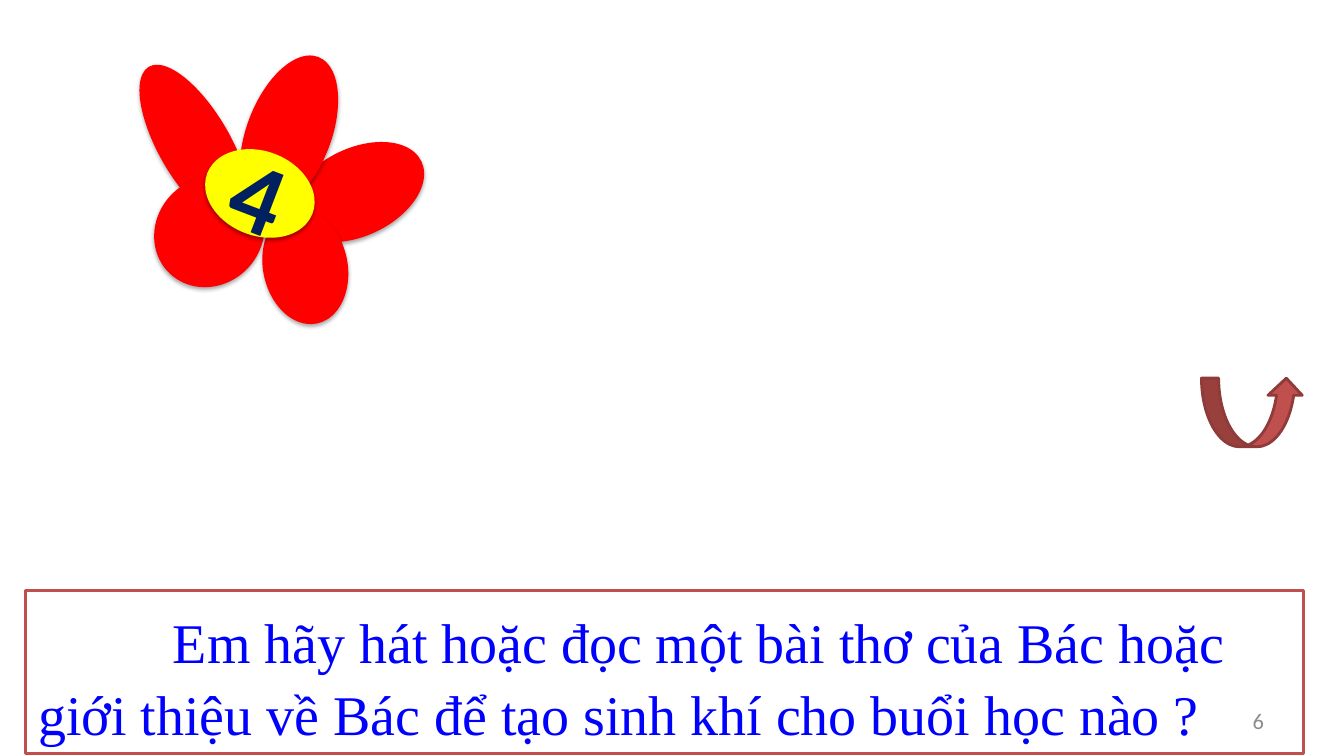
from lxml import etree
from pptx import Presentation
from pptx.dml.color import RGBColor
from pptx.enum.shapes import MSO_SHAPE
from pptx.enum.text import MSO_ANCHOR, PP_ALIGN
from pptx.oxml import parse_xml
from pptx.oxml.ns import nsdecls
from pptx.util import Cm, Pt

OVAL = MSO_SHAPE.OVAL
RECTANGLE = MSO_SHAPE.RECTANGLE
CURVED_ARROW = MSO_SHAPE.CURVED_UP_ARROW
MIDDLE, BOTTOM = MSO_ANCHOR.MIDDLE, MSO_ANCHOR.BOTTOM
LEFT, CENTER, RIGHT = PP_ALIGN.LEFT, PP_ALIGN.CENTER, PP_ALIGN.RIGHT

RED = RGBColor(0xFF, 0x00, 0x00)
YELLOW = RGBColor(0xFF, 0xFF, 0x00)
NAVY = RGBColor(0x00, 0x20, 0x60)
BLUE = RGBColor(0x00, 0x00, 0xFF)
WHITE = RGBColor(0xFF, 0xFF, 0xFF)
BRICK = RGBColor(0xC0, 0x50, 0x4D)
DARK_BRICK = RGBColor(0x8E, 0x3B, 0x39)
GRAY = RGBColor(0x8C, 0x8C, 0x8C)

# left, top, width, height in cm, then rotation in degrees
PETALS = [
    (7.9, 3.05, 2.21, 3.58, 64.4),
    (6.22, 1.3, 2.13, 4.11, 21),
    (6.63, 5.26, 2.13, 2.92, 348.5),
    (4.01, 1.37, 1.8, 4.6, 329.8),
    (3.94, 4.39, 2.67, 2.9, 43.3),
]
FLOWER_CENTRE = (5.13, 3.81, 2.84, 2.13, 21)
QUESTION = ("Em hãy hát hoặc đọc một bài thơ của Bác hoặc giới thiệu về Bác "
            "để tạo sinh khí cho buổi học nào ?")
SHADOW = f"""<a:effectLst {nsdecls('a')}>
  <a:outerShdw blurRad="{Pt(3.1)}" dist="{Pt(1.8)}" dir="5400000" rotWithShape="0">
    <a:srgbClr val="000000"><a:alpha val="35000"/></a:srgbClr>
  </a:outerShdw>
</a:effectLst>"""


def add_shape(shapes, kind, place, fill, line=None):
    shape = shapes.add_shape(kind, *map(Cm, place))
    shape.shadow.inherit = False
    shape.fill.solid()
    shape.fill.fore_color.rgb = fill
    if line is None:
        shape.line.fill.background()
    else:
        shape.line.color.rgb = line
        shape.line.width = Pt(2)
    return shape


def add_flower_part(flower, place, fill):
    """Add a rotated oval with a soft shadow below it."""
    *bounds, rotation = place
    oval = add_shape(flower.shapes, OVAL, bounds, fill)
    oval.rotation = rotation
    properties = oval.element.spPr
    properties.replace(properties.find("{*}effectLst"), parse_xml(SHADOW))
    return oval


def write_text(box, text, color, font, frame_format, para_format):
    frame = box.text_frame
    for name, value in frame_format.items():
        setattr(frame, name, value)
    para = frame.paragraphs[0]
    for name, value in para_format.items():
        setattr(para, name, value)
    span = para.add_run()
    span.text = text
    for name, value in font.items():
        setattr(span.font, name, value)
    span.font.color.rgb = color
    return para


def add_flower(page, number):
    flower = page.shapes.add_group_shape()
    for petal in PETALS:
        add_flower_part(flower, petal, RED)
    centre = add_flower_part(flower, FLOWER_CENTRE, YELLOW)
    write_text(centre, number, NAVY,
               {"name": "Calibri", "size": Pt(72), "bold": True},
               {"vertical_anchor": MIDDLE, "word_wrap": True},
               {"alignment": CENTER})


def add_question(page, insets):
    box = add_shape(page.shapes, RECTANGLE, (0.64, 14.88, 32.21, 4.11), WHITE, BRICK)
    para = write_text(box, QUESTION, BLUE,
                      {"name": "Times New Roman", "size": Pt(40)},
                      {"vertical_anchor": BOTTOM, "word_wrap": True, **insets},
                      {"alignment": LEFT, "line_spacing": 1.07})
    para._p.get_or_add_pPr().set("indent", str(Cm(3.39)))


def add_page_number(page, insets):
    box = page.shapes.add_textbox(Cm(24.28), Cm(17.65), Cm(7.9), Cm(1.02))
    para = write_text(box, "6", GRAY, {"name": "Calibri", "size": Pt(16)},
                      {"vertical_anchor": MIDDLE, "word_wrap": True, **insets},
                      {"alignment": RIGHT})
    span = para.runs[0]._r
    field = etree.Element(
        span.tag.replace("}r", "}fld"),
        {"id": "{B6F15528-21DE-4FAA-801E-634DDDAF4B2B}", "type": "slidenum"})
    field.extend(list(span))
    para._p.replace(span, field)


def main():
    deck = Presentation()
    deck.slide_width, deck.slide_height = Cm(33.87), Cm(19.05)
    first_number = deck.element
    first_number.set("firstSlideNum", "6")
    page = deck.slides.add_slide(deck.slide_layouts[6])
    insets = {"margin_left": Cm(0.33), "margin_right": Cm(0.33),
              "margin_top": Cm(0.18), "margin_bottom": Cm(0.18)}
    add_flower(page, "4")
    add_question(page, insets)
    add_page_number(page, insets)
    add_shape(page.shapes, CURVED_ARROW, (30.28, 9.53, 2.57, 1.73), BRICK, DARK_BRICK)
    deck.save("out.pptx")


if __name__ == "__main__":
    main()
